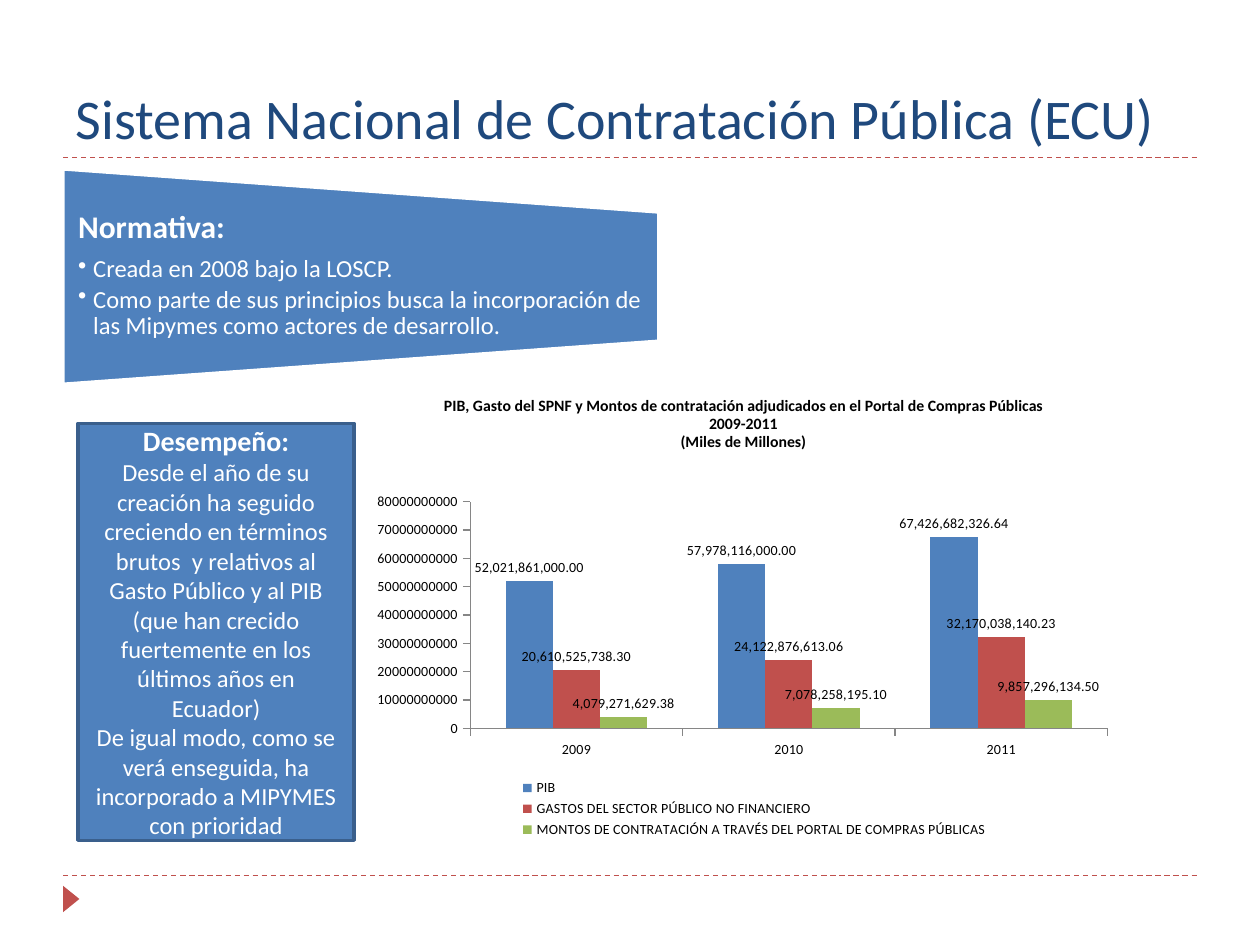
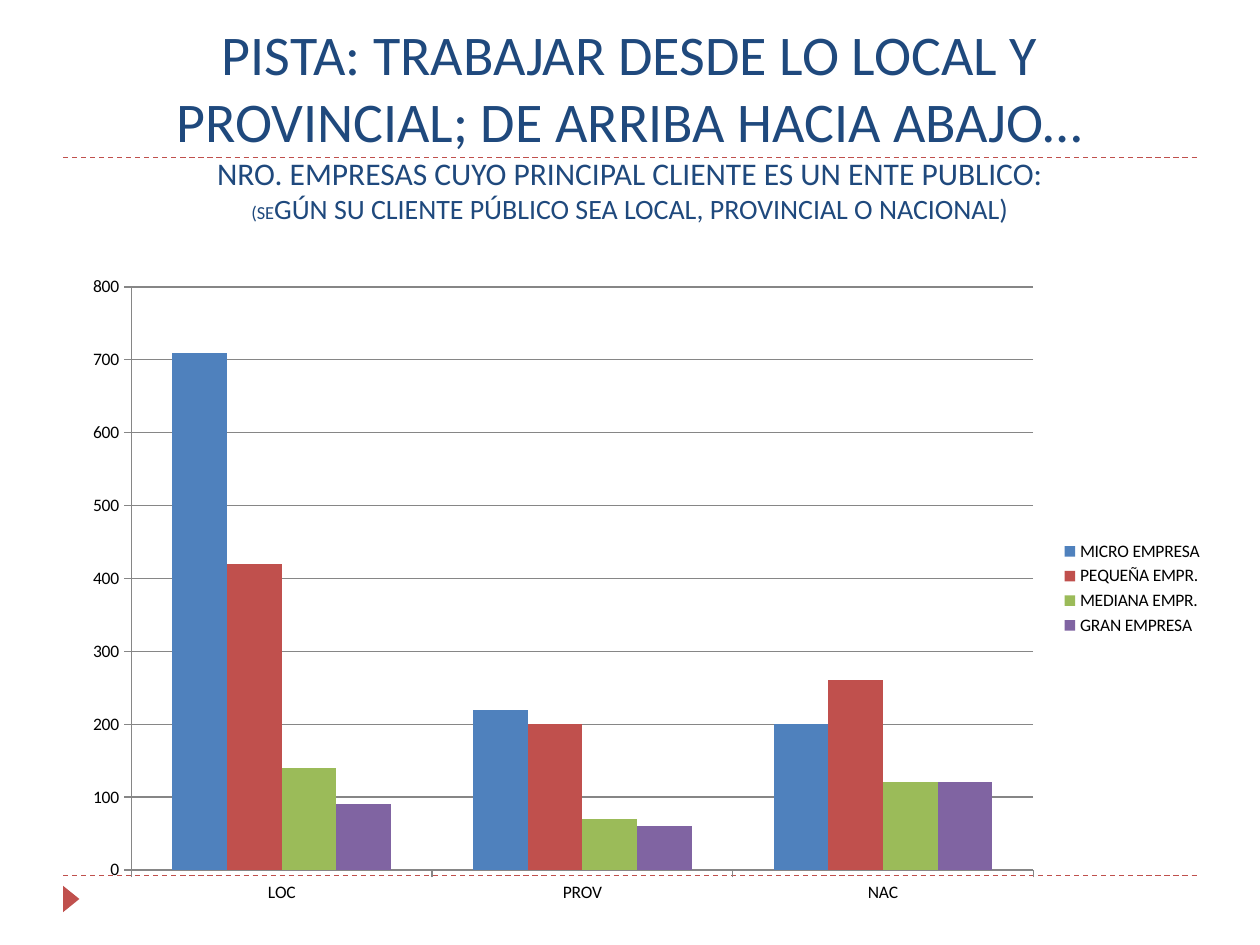
from dataclasses import dataclass

from lxml.etree import Element, SubElement
from pptx import Presentation
from pptx.chart.data import CategoryChartData
from pptx.dml.color import RGBColor
from pptx.enum.chart import XL_CHART_TYPE, XL_LABEL_POSITION, XL_LEGEND_POSITION, XL_TICK_MARK
from pptx.enum.dml import MSO_LINE
from pptx.enum.shapes import MSO_CONNECTOR, MSO_SHAPE
from pptx.enum.text import MSO_ANCHOR, MSO_AUTO_SIZE, PP_ALIGN
from pptx.oxml.ns import qn
from pptx.util import Inches, Pt

CLUSTERED = XL_CHART_TYPE.COLUMN_CLUSTERED
OUTSIDE_END = XL_LABEL_POSITION.OUTSIDE_END
LEGEND_BOTTOM, LEGEND_RIGHT = XL_LEGEND_POSITION.BOTTOM, XL_LEGEND_POSITION.RIGHT
TICK_OUT, TICK_NONE = XL_TICK_MARK.OUTSIDE, XL_TICK_MARK.NONE
DASH = MSO_LINE.DASH
STRAIGHT = MSO_CONNECTOR.STRAIGHT
TRIANGLE = MSO_SHAPE.ISOSCELES_TRIANGLE
TRAPEZOID = MSO_SHAPE.FLOWCHART_MANUAL_OPERATION
RECTANGLE = MSO_SHAPE.RECTANGLE
BOTTOM, MIDDLE, TOP = MSO_ANCHOR.BOTTOM, MSO_ANCHOR.MIDDLE, MSO_ANCHOR.TOP
NO_FIT = MSO_AUTO_SIZE.NONE
LEFT, CENTER = PP_ALIGN.LEFT, PP_ALIGN.CENTER


@dataclass(frozen=True)
class Theme:
    """Colours, font and type sizes shared by the slides."""

    font: str = "Calibri"
    navy: str = "1F497D"
    blue: str = "4F81BD"
    blue_edge: str = "3A5F8C"
    red: str = "C0504D"
    green: str = "9BBB59"
    purple: str = "8064A2"
    grey: str = "868686"
    white: str = "FFFFFF"
    black: str = "000000"
    title: float = 32
    subtitle: float = 18
    subtitle_detail: float = 16
    subtitle_small: float = 10.5
    rule_heading: float = 18
    results_heading: float = 16
    body: float = 14

    @property
    def series(self):
        """Return the chart colours in series order."""
        return self.blue, self.red, self.green, self.purple


THEME = Theme()


def apply(target, **values):
    """Set each named format value on the target."""
    for name, value in values.items():
        setattr(target, name, value)


def box(left, top, width, height):
    """Return a frame in lengths."""
    return [Inches(value) for value in (left, top, width, height)]


def style_font(font, size, color, bold=False):
    """Format a font in the shared typeface."""
    apply(font, name=THEME.font, size=Pt(size), bold=bold)
    font.color.rgb = RGBColor.from_string(color)


def style_line(line, color, width):
    """Give a line its colour and width in points."""
    line.color.rgb = RGBColor.from_string(color)
    line.width = Pt(width)


def add_block(slide, kind, frame, fill, edge=None, rotation=0):
    """Add a flat preset shape."""
    block = slide.shapes.add_shape(kind, *box(*frame))
    block.rotation = rotation
    block.shadow.inherit = False
    block.fill.solid()
    block.fill.fore_color.rgb = RGBColor.from_string(fill)
    if edge:
        style_line(block.line, edge, 2)
    else:
        block.line.fill.background()
    return block


def add_rule(slide, top):
    """Add a dashed rule across the slide."""
    rule = slide.shapes.add_connector(
        STRAIGHT, Inches(0.5), Inches(top), Inches(9.5), Inches(top))
    style_line(rule.line, THEME.red, 0.75)
    rule.line.dash_style = DASH
    SubElement(rule.element.spPr, qn("a:effectLst"))


def add_title(slide, top, pieces, align=LEFT):
    """Fill the title with (text, size) pieces; a newline breaks the line."""
    title = slide.shapes.title
    frame = box(0.5, top, 9, 1.08)
    apply(title, **dict(zip(("left", "top", "width", "height"), frame)))
    apply(title.text_frame, word_wrap=True, auto_size=NO_FIT, vertical_anchor=BOTTOM)
    paragraph = title.text_frame.paragraphs[0]
    paragraph.alignment = align
    for text, size in pieces:
        run = paragraph.add_run()
        run.text = text.rstrip("\n")
        style_font(run.font, size, THEME.navy)
        if text.endswith("\n"):
            paragraph.add_line_break()


def start_slide(deck, title_top, pieces, align=LEFT):
    """Add a title-only slide with its rules and corner marker."""
    slide = deck.slides.add_slide(deck.slide_layouts[5])
    for top in (6.95, 1.25):
        add_rule(slide, top)
    add_block(slide, TRIANGLE, (0.46, 7.07, 0.21, 0.13), THEME.red, rotation=90)
    add_title(slide, title_top, pieces, align)
    return slide


def write_paragraphs(text_frame, heading, heading_size, lines, align):
    """Write a bold heading and the lines under it, and return the paragraphs."""
    for index, text in enumerate([heading, *lines]):
        paragraph = text_frame.add_paragraph() if index else text_frame.paragraphs[0]
        paragraph.alignment = align
        run = paragraph.add_run()
        run.text = text
        style_font(run.font, THEME.body if index else heading_size, THEME.white, not index)
    return text_frame.paragraphs


def add_regulation(slide, heading, points):
    """Add the tapered panel with its bulleted points."""
    add_block(slide, TRAPEZOID, (2.01, -0.17, 1.71, 4.73), THEME.blue, THEME.white, 270)
    text_frame = slide.shapes.add_textbox(*box(0.5, 1.68, 4.73, 1.03)).text_frame
    apply(text_frame, word_wrap=True, vertical_anchor=TOP, margin_left=Inches(0.12),
          margin_right=Inches(0.12), margin_top=0, margin_bottom=0)
    first, *bulleted = write_paragraphs(
        text_frame, heading, THEME.rule_heading, points, LEFT)
    apply(first, line_spacing=0.9, space_after=Pt(6.3))
    for paragraph in bulleted:
        apply(paragraph, line_spacing=0.9, space_after=Pt(2.1))
        properties = paragraph._p.get_or_add_pPr()
        properties.set("marL", str(Inches(0.12)))
        properties.set("indent", str(-Inches(0.12)))
        SubElement(properties, qn("a:buChar"), char="•")


def add_performance(slide, heading, lines):
    """Add the outlined panel of centred text."""
    panel = add_block(slide, RECTANGLE, (0.62, 3.36, 2.19, 3.31), THEME.blue, THEME.blue_edge)
    apply(panel.text_frame, word_wrap=True, vertical_anchor=MIDDLE)
    write_paragraphs(panel.text_frame, heading, THEME.results_heading, lines, CENTER)


def place_part(part, index, fractions, inner=False):
    """Fix a chart part at fractions of the chart area."""
    for old in part.findall(qn("c:layout")):
        part.remove(old)
    layout = Element(qn("c:layout"))
    manual = SubElement(layout, qn("c:manualLayout"))
    if inner:
        SubElement(manual, qn("c:layoutTarget"), val="inner")
    for name in ("xMode", "yMode"):
        SubElement(manual, qn(f"c:{name}"), val="edge")
    for name, value in zip("xywh", fractions):
        SubElement(manual, qn(f"c:{name}"), val=str(value))
    part.insert(index, layout)


def add_columns(slide, frame, categories, series, size, legend_position, top_value, step, plot_area):
    """Add a clustered column chart in the shared style."""
    data = CategoryChartData()
    data.categories = categories
    for name, values in series.items():
        data.add_series(name, values)
    chart = slide.shapes.add_chart(CLUSTERED, *box(*frame), data).chart
    style_font(chart.font, size, THEME.black)
    apply(chart, has_title=False, has_legend=True)
    apply(chart.legend, position=legend_position, include_in_layout=False)
    apply(chart.plots[0], gap_width=150, overlap=0, vary_by_categories=False)
    for column, color in zip(chart.plots[0].series, THEME.series):
        column.format.fill.solid()
        column.format.fill.fore_color.rgb = RGBColor.from_string(color)
    for axis in (chart.category_axis, chart.value_axis):
        apply(axis, major_tick_mark=TICK_OUT, minor_tick_mark=TICK_NONE,
              has_major_gridlines=False)
        style_line(axis.format.line, THEME.grey, 0.75)
    apply(chart.value_axis, minimum_scale=0, maximum_scale=top_value, major_unit=step)
    chart.value_axis.tick_labels.number_format = "0"
    chart.value_axis.tick_labels.number_format_is_linked = False
    place_part(chart.element.chart.plotArea, 0, plot_area, inner=True)
    return chart


def title_chart(chart, lines, size):
    """Write the chart title, one paragraph a line."""
    chart.has_title = True
    text_frame = chart.chart_title.text_frame
    for index, text in enumerate(lines):
        paragraph = text_frame.add_paragraph() if index else text_frame.paragraphs[0]
        run = paragraph.add_run()
        run.text = text
        style_font(run.font, size, THEME.black, True)


def label_values(chart, size):
    """Show each value above its column."""
    plot = chart.plots[0]
    plot.has_data_labels = True
    apply(plot.data_labels, show_value=True, number_format="#,##0.00",
          number_format_is_linked=False, position=OUTSIDE_END)
    style_font(plot.data_labels.font, size, THEME.black)


def build_procurement(deck):
    """Build the slide on the public procurement system."""
    slide = start_slide(
        deck, 0.17, [("Sistema Nacional de Contratación Pública (ECU)", THEME.title)])
    add_regulation(slide, "Normativa:", [
        "Creada en 2008 bajo la LOSCP.",
        "Como parte de sus principios busca la incorporación de las Mipymes "
        "como actores de desarrollo."])
    spending = {
        "PIB": (52021861000, 57978116000, 67426682326.64),
        "GASTOS DEL SECTOR PÚBLICO NO FINANCIERO":
            (20610525738.3, 24122876613.06, 32170038140.23),
        "MONTOS DE CONTRATACIÓN A TRAVÉS DEL PORTAL DE COMPRAS PÚBLICAS":
            (4079271629.38, 7078258195.1, 9857296134.5),
    }
    chart = add_columns(slide, (2.89, 2.97, 6.02, 3.75), ("2009", "2010", "2011"), spending,
                        8, LEGEND_BOTTOM, 80000000000, 10000000000, (0.14, 0.27, 0.84, 0.48))
    title_chart(chart, [
        "PIB, Gasto del SPNF y Montos de contratación adjudicados en el Portal de Compras Públicas",
        "2009-2011",
        "(Miles de Millones)"], 9)
    label_values(chart, 8)
    place_part(chart.element.chart.find(qn("c:legend")), 1, (0.19, 0.85, 0.65, 0.14))
    add_performance(slide, "Desempeño:", [
        "Desde el año de su creación ha seguido creciendo en términos brutos  y relativos "
        "al Gasto Público y al PIB (que han crecido fuertemente en los últimos años en Ecuador)",
        "De igual modo, como se verá enseguida, ha incorporado a MIPYMES con prioridad"])


def build_clients(deck):
    """Build the slide on firms that sell to public bodies."""
    slide = start_slide(deck, 0.76, [
        ("PISTA: TRABAJAR DESDE LO LOCAL Y PROVINCIAL; DE ARRIBA HACIA ABAJO…\n", THEME.title),
        ("NRO. EMPRESAS CUYO PRINCIPAL CLIENTE ES UN ENTE PUBLICO:\n", THEME.subtitle),
        ("(SE", THEME.subtitle_small),
        ("GÚN SU CLIENTE PÚBLICO SEA LOCAL, PROVINCIAL O NACIONAL)", THEME.subtitle_detail),
    ], CENTER)
    firms = {
        "MICRO EMPRESA": (710, 220, 200),
        "PEQUEÑA EMPR.": (420, 200, 260),
        "MEDIANA EMPR.": (140, 70, 120),
        "GRAN EMPRESA": (90, 60, 120),
    }
    chart = add_columns(slide, (0.59, 2.07, 9.06, 5.2), ("LOC", "PROV", "NAC"), firms,
                        10, LEGEND_RIGHT, 800, 100, (0.05, 0.04, 0.79, 0.89))
    chart.value_axis.has_major_gridlines = True
    style_line(chart.value_axis.major_gridlines.format.line, THEME.grey, 0.75)


def main():
    """Build and save the deck."""
    deck = Presentation()
    apply(deck, slide_width=Inches(10), slide_height=Inches(7.5))
    build_procurement(deck)
    build_clients(deck)
    deck.save("out.pptx")


if __name__ == "__main__":
    main()
